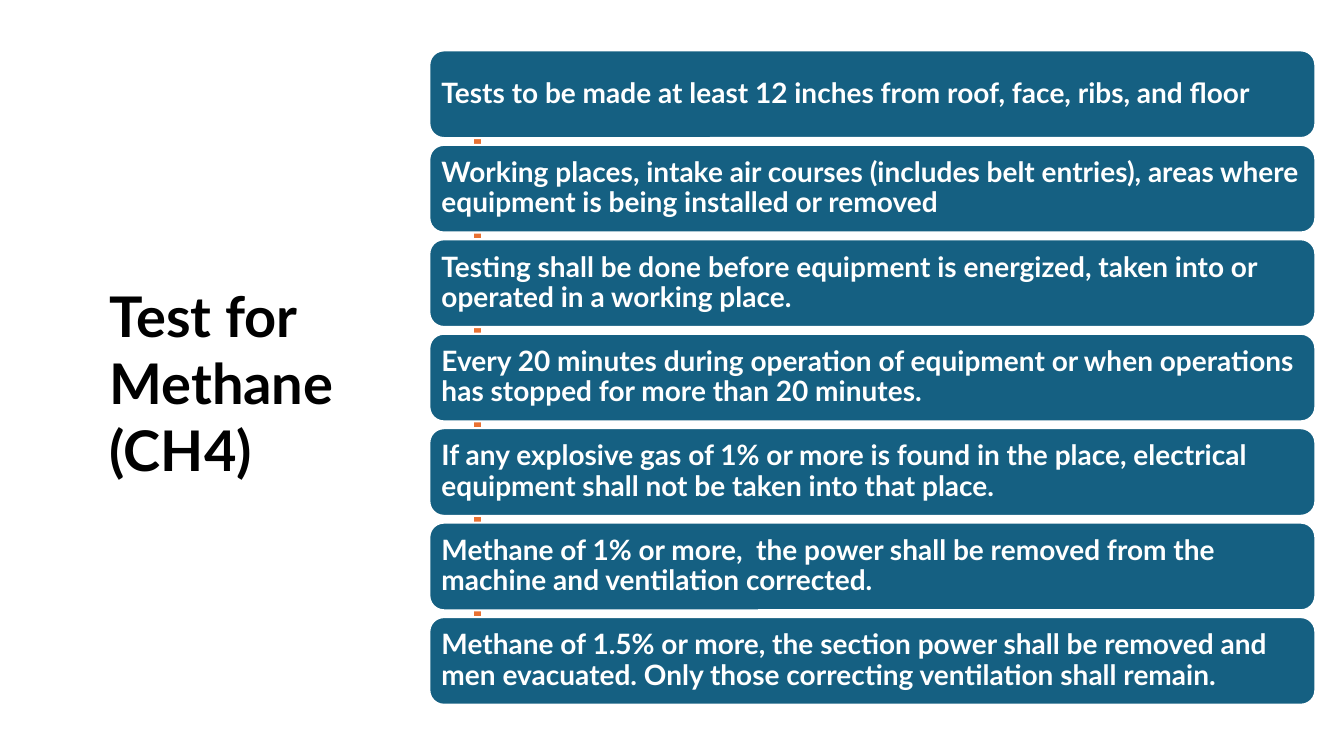
import pptx
import pptx.dml.color
import pptx.enum.shapes
import pptx.enum.text
import pptx.util

Cm = pptx.util.Cm
Pt = pptx.util.Pt
LEFT = pptx.enum.text.PP_ALIGN.LEFT
ANCHOR = pptx.enum.text.MSO_ANCHOR

WHITE, BLACK, TEAL, ORANGE = "FFFFFF", "000000", "156082", "E97132"

RULES = [
    "Tests to be made at least 12 inches from roof, face, ribs, and floor",
    "Working places, intake air courses (includes belt entries), areas where "
    "equipment is being installed or removed",
    "Testing shall be done before equipment is energized, taken into or "
    "operated in a working place.",
    "Every 20 minutes during operation of equipment or when operations "
    "has stopped for more than 20 minutes.",
    "If any explosive gas of 1% or more is found in the place, electrical "
    "equipment shall not be taken into that place.",
    "Methane of 1% or more,  the power shall be removed from the "
    "machine and ventilation corrected.",
    "Methane of 1.5% or more, the section power shall be removed and "
    "men evacuated. Only those correcting ventilation shall remain.",
]


def apply(target, values):
    for name, value in values.items():
        setattr(target, name, value)


def colour(hex_value):
    return pptx.dml.color.RGBColor.from_string(hex_value)


def paint(shape, fill, line, width):
    shape.shadow.inherit = False
    shape.fill.solid()
    shape.fill.fore_color.rgb = colour(fill)
    shape.line.color.rgb = colour(line)
    shape.line.width = Pt(width)


def write(frame, lines, size, hex_value, spacing):
    for index, line in enumerate(lines):
        para = frame.paragraphs[0] if index == 0 else frame.add_paragraph()
        apply(para, {"alignment": LEFT, "line_spacing": spacing,
                     "space_before": Pt(0)})
        span = para.add_run()
        span.text = line
        apply(span.font, {"name": "Lato", "size": Pt(size), "bold": True})
        span.font.color.rgb = colour(hex_value)


def add_title(page, lines):
    title = page.shapes.title
    apply(title, {"left": Cm(2.51), "top": Cm(6.96),
                  "width": Cm(10.39), "height": Cm(5.38)})
    apply(title.text_frame, {"word_wrap": True, "vertical_anchor": ANCHOR.TOP,
                             "auto_size": pptx.enum.text.MSO_AUTO_SIZE.NONE})
    write(title.text_frame, lines, 40, BLACK, 1.0)


def add_spine(page):
    left, right, top, bottom = Cm(12.01), Cm(12.07), Cm(2.13), Cm(17.17)
    builder = page.shapes.build_freeform(left, top)
    builder.add_line_segments([(right, top), (right, bottom), (left, bottom)])
    paint(builder.convert_to_shape(), ORANGE, ORANGE, 3.25)


def add_rule(page, index, text):
    box = page.shapes.add_shape(
        pptx.enum.shapes.MSO_SHAPE.ROUNDED_RECTANGLE,
        Cm(10.82), Cm(1.27 + 2.38 * index), Cm(22.33), Cm(2.21))
    paint(box, TEAL, WHITE, 1.5)
    margins = {f"margin_{side}": Cm(0.2)
               for side in ("left", "right", "top", "bottom")}
    apply(box.text_frame, {"word_wrap": True,
                           "vertical_anchor": ANCHOR.MIDDLE, **margins})
    write(box.text_frame, [text], 20, WHITE, 0.9)


def main():
    deck = pptx.Presentation()
    apply(deck, {"slide_width": Cm(33.87), "slide_height": Cm(19.05)})
    page = deck.slides.add_slide(deck.slide_layouts.get_by_name("Title Only"))

    # Heading on the left
    add_title(page, ["Test for Methane", "(CH4)"])

    # Orange spine behind the stacked rules
    add_spine(page)
    for index, text in enumerate(RULES):
        add_rule(page, index, text)

    deck.save("out.pptx")


if __name__ == "__main__":
    main()
